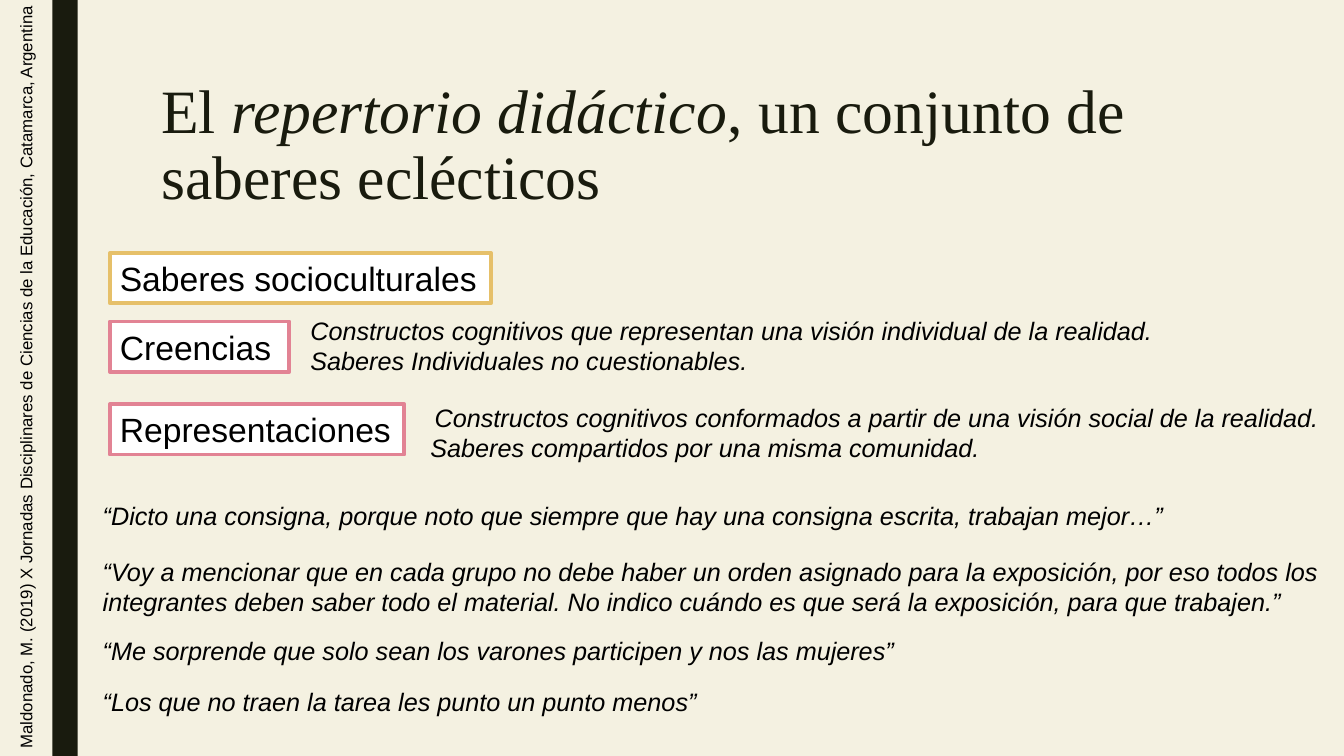
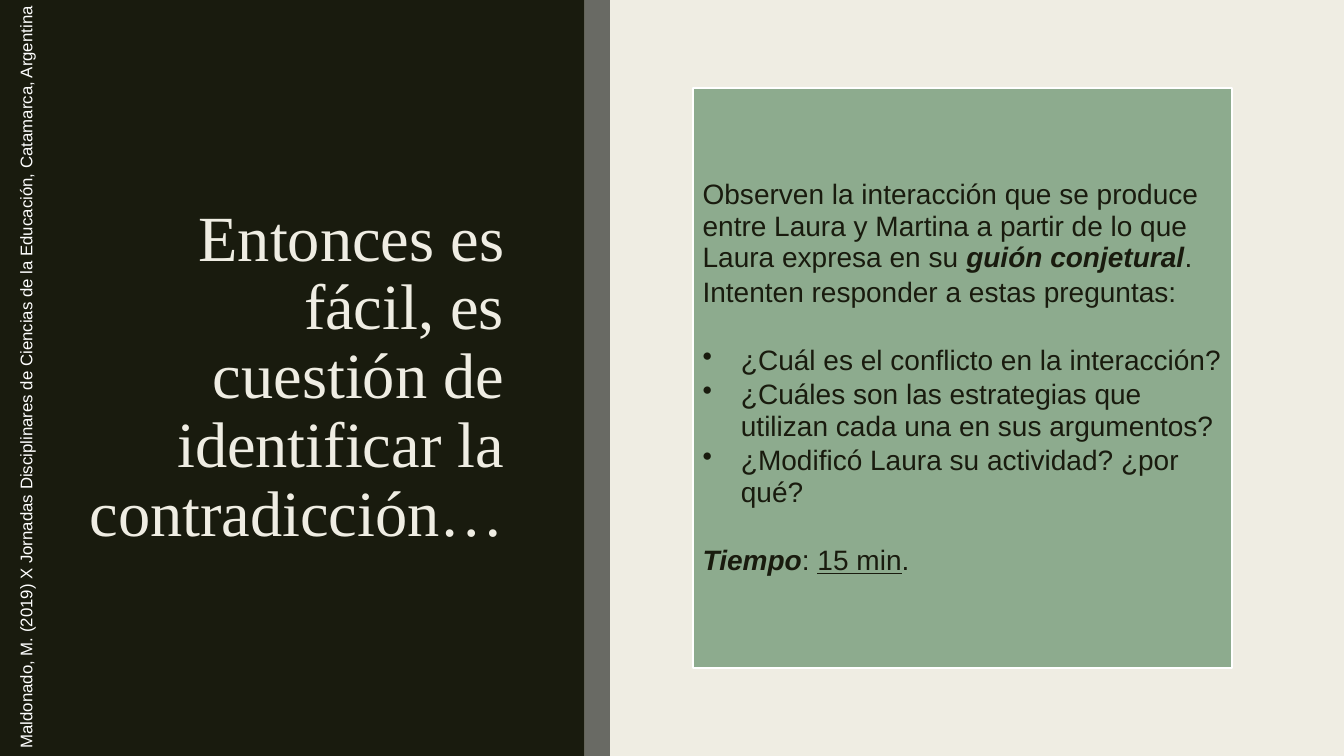
import pptx
import pptx.dml.color
import pptx.enum.shapes
import pptx.enum.text
import pptx.oxml
import pptx.oxml.ns
import pptx.util

Inches = pptx.util.Inches
Pt = pptx.util.Pt
RGBColor = pptx.dml.color.RGBColor
PP_ALIGN = pptx.enum.text.PP_ALIGN
MSO_ANCHOR = pptx.enum.text.MSO_ANCHOR
RECT = pptx.enum.shapes.MSO_SHAPE.RECTANGLE

DARK = RGBColor(0x19, 0x1B, 0x0E)
CREAM = RGBColor(0xF4, 0xF1, 0xE1)
IVORY = RGBColor(0xEF, 0xED, 0xE3)
GREY = RGBColor(0x69, 0x6A, 0x64)
GREEN = RGBColor(0x8D, 0xAB, 0x8E)
GOLD = RGBColor(0xE6, 0xC0, 0x69)
PINK = RGBColor(0xE2, 0x83, 0x94)
BLACK = RGBColor(0, 0, 0)
WHITE = RGBColor(0xFF, 0xFF, 0xFF)

LABEL = {"name": "Arial", "size": Pt(24)}
NOTE = {"name": "Arial", "size": Pt(18), "italic": True}
FOOTER = {"name": "Arial", "size": Pt(12)}
BODY = {"name": "Arial", "size": Pt(20)}
FOOTER_TEXT = ("Maldonado, M. (2019) X Jornadas Disciplinares de Ciencias "
               "de la Educación, Catamarca, Argentina")


def write(p, runs, color, fmt):
    """Add (text, extra format) runs to a paragraph."""
    for text, extra in runs:
        r = p.add_run()
        r.text = text
        r.font.color.rgb = color
        for key, value in {**fmt, **extra}.items():
            setattr(r.font, key, value)


def add_box(s, at, fill=None, line=None, width=0):
    """Add a rectangle, or a text box when there is no fill."""
    at = [Inches(v) for v in at]
    if fill is None:
        sp = s.shapes.add_textbox(*at)
    else:
        sp = s.shapes.add_shape(RECT, *at)
        sp.shadow.inherit = False
        sp.fill.solid()
        sp.fill.fore_color.rgb = fill
        if line is None:
            sp.line.fill.background()
        else:
            sp.line.color.rgb = line
            sp.line.width = Pt(width)
    sp.text_frame.word_wrap = True
    sp.text_frame.paragraphs[0].alignment = PP_ALIGN.LEFT
    return sp


prs = pptx.Presentation()
prs.slide_width = Inches(13.33)
prs.slide_height = Inches(7.5)

# Shared parts: background, title and rotated footer
slides = []
for background, ink, title_ink, size, at, align, anchor, title in [
    (CREAM, BLACK, DARK, 44, (1.5, 0.75, 10.5, 1.62), PP_ALIGN.LEFT, MSO_ANCHOR.TOP,
     [("El ", {}), ("repertorio didáctico", {"italic": True}),
      (", un conjunto de saberes eclécticos", {})]),
    (IVORY, WHITE, IVORY, 46, (0.7, 0.87, 4.4, 5.76), PP_ALIGN.RIGHT, MSO_ANCHOR.MIDDLE,
     [("Entonces es fácil, es cuestión de identificar la contradicción…", {})]),
]:
    s = prs.slides.add_slide(prs.slide_layouts[5])
    s.background.fill.solid()
    s.background.fill.fore_color.rgb = background

    sp = s.shapes.title
    sp.left, sp.top, sp.width, sp.height = [Inches(v) for v in at]
    tf = sp.text_frame
    tf.auto_size = pptx.enum.text.MSO_AUTO_SIZE.NONE
    tf.vertical_anchor = anchor
    p = tf.paragraphs[0]
    p.alignment = align
    p.line_spacing = 0.89
    write(p, title, title_ink, {"name": "Times New Roman", "size": Pt(size)})

    footer = add_box(s, (-5.71, 1.41, 11.93, 0.3))
    footer.rotation = 270
    write(footer.text_frame.paragraphs[0], [(FOOTER_TEXT, {})], ink, FOOTER)
    slides.append(s)

# Slide 1: side band, labels, definitions and quotes
s = slides[0]
add_box(s, (0.52, 0, 0.25, 7.5), DARK)

for top, width, line, text in [
    (2.51, 3.78, GOLD, "Saberes socioculturales"),
    (3.19, 1.78, PINK, "Creencias"),
    (4.01, 2.92, PINK, "Representaciones"),
]:
    sp = add_box(s, (1.09, top, width, 0.5), WHITE, line, 2.75)
    write(sp.text_frame.paragraphs[0], [(text, {})], BLACK, LABEL)

for at, text in [
    ((2.98, 3.08, 9.21, 0.71),
     "Constructos cognitivos que representan una visión individual de la realidad. "
     "Saberes Individuales no cuestionables."),
    ((0.92, 4.91, 10.82, 0.4),
     "“Dicto una consigna, porque noto que siempre que hay una consigna escrita, "
     "trabajan mejor…”"),
    ((0.92, 5.47, 12.31, 0.71),
     "“Voy a mencionar que en cada grupo no debe haber un orden asignado para la "
     "exposición, por eso todos los integrantes deben saber todo el material. "
     "No indico cuándo es que será la exposición, para que trabajen.”"),
    ((0.92, 6.25, 8.13, 0.4),
     "“Me sorprende que solo sean los varones participen y nos las mujeres”"),
    ((0.92, 6.76, 6.15, 0.4),
     "“Los que no traen la tarea les punto un punto menos”"),
]:
    sp = add_box(s, at)
    write(sp.text_frame.paragraphs[0], [(text, {})], BLACK, NOTE)

tf = add_box(s, (4.17, 3.94, 9.05, 0.71)).text_frame
p = tf.paragraphs[0]
p.alignment = PP_ALIGN.CENTER
write(p, [("Constructos cognitivos conformados a partir de una visión social "
           "de la realidad.", {})], BLACK, NOTE)
write(tf.add_paragraph(), [("Saberes compartidos por una misma comunidad.", {})],
      BLACK, NOTE)

# Slide 2: dark panel behind the title, grey band
s = slides[1]
panel = add_box(s, (0, 0, 5.8, 7.5), DARK)
s.shapes.title.element.addprevious(panel.element)
add_box(s, (5.8, 0, 0.25, 7.5), GREY)

# Slide 2: task card
tf = add_box(s, (6.87, 0.87, 5.35, 5.76), GREEN, WHITE, 1.5).text_frame
tf.vertical_anchor = MSO_ANCHOR.MIDDLE
strong = {"bold": True, "italic": True}
for i, (runs, bullet, before) in enumerate([
    ([("Observen la interacción que se produce entre Laura y Martina a partir de "
       "lo que Laura expresa en su ", {}), ("guión conjetural", strong), (".", {})],
     False, 0),
    ([("Intenten responder a estas preguntas:", {})], False, 0),
    ([("¿Cuál es el conflicto en la interacción?", {})], True, 24),
    ([("¿Cuáles son las estrategias que utilizan cada una en sus argumentos?", {})],
     True, 0),
    ([("¿Modificó Laura su actividad? ¿por qué?", {})], True, 0),
    ([("Tiempo", strong), (": ", {}), ("15 min", {"underline": True}), (".", {})],
     False, 24),
]):
    p = tf.paragraphs[0] if i == 0 else tf.add_paragraph()
    for key, value in {"alignment": PP_ALIGN.LEFT, "line_spacing": 0.94,
                       "space_before": Pt(before), "space_after": Pt(2)}.items():
        setattr(p, key, value)
    write(p, runs, DARK, BODY)
    if bullet:
        pPr = p._p.get_or_add_pPr()
        pPr.set("marL", str(Inches(0.38)))
        pPr.set("indent", str(-Inches(0.38)))
        pPr.append(pptx.oxml.parse_xml(
            '<a:buChar %s char="•"/>' % pptx.oxml.ns.nsdecls("a")))

prs.save("out.pptx")
